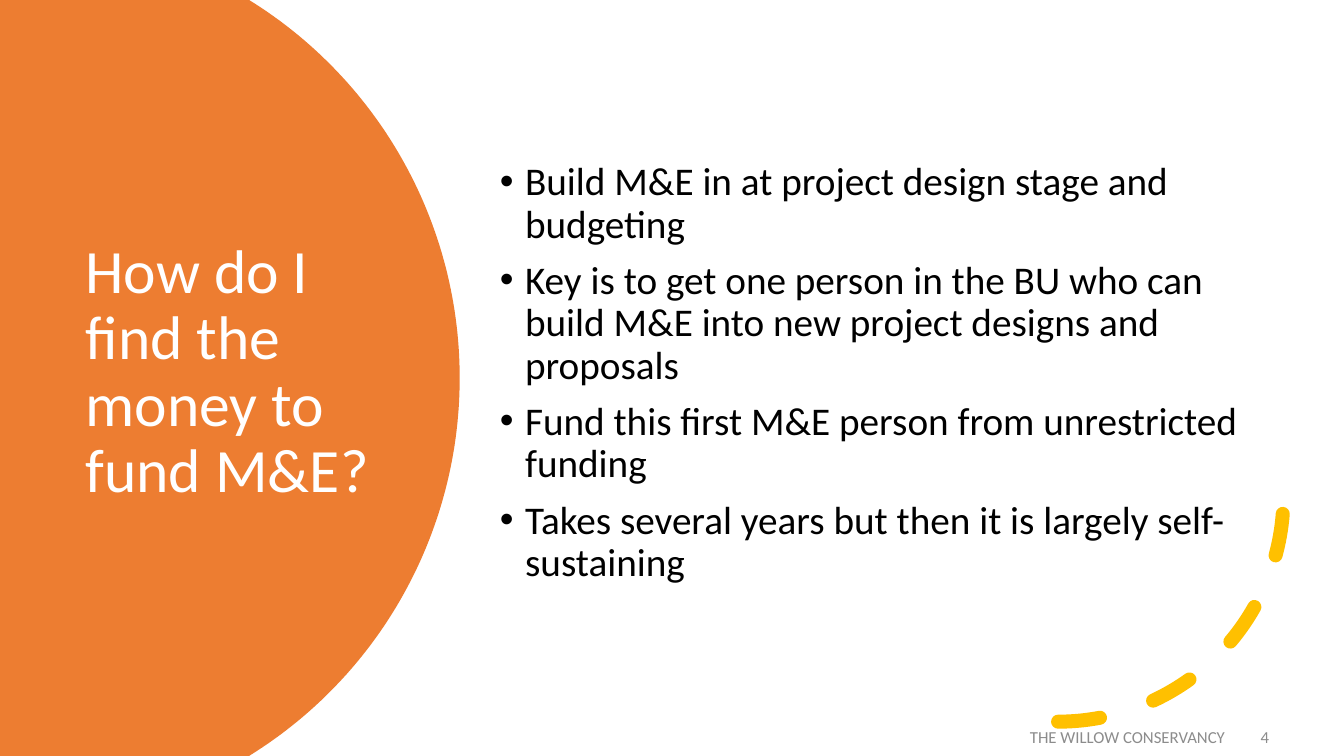
import math
from lxml import etree
from pptx import Presentation
from pptx.dml.color import RGBColor
from pptx.enum.dml import MSO_LINE
from pptx.enum.shapes import MSO_SHAPE
from pptx.enum.text import MSO_ANCHOR, PP_ALIGN
from pptx.oxml.ns import qn
from pptx.util import Inches, Pt

ARC = MSO_SHAPE.ARC
DASH = MSO_LINE.DASH
MIDDLE = MSO_ANCHOR.MIDDLE
LEFT, CENTER, RIGHT = PP_ALIGN.LEFT, PP_ALIGN.CENTER, PP_ALIGN.RIGHT

FONT = "Calibri"
COLORS = {
    "panel": "ED7D31",
    "title": "FFFFFF",
    "body": "000000",
    "accent": "FFC000",
    "footer": "8C8C8C",
}
TITLE = "How do I find the money to fund M&E?"
BULLETS = [
    "Build M&E in at project design stage and budgeting",
    "Key is to get one person in the BU who can build M&E into new project designs and proposals",
    "Fund this first M&E person from unrestricted funding",
    "Takes several years but then it is largely self-sustaining",
]


def color(name):
    return RGBColor.from_string(COLORS[name])


def add_text(s, box, texts, size, color_name, align=LEFT, spacing=1.0):
    tf = s.shapes.add_textbox(*map(Inches, box)).text_frame
    tf.word_wrap = True
    tf.vertical_anchor = MIDDLE
    for i, text in enumerate(texts):
        p = tf.add_paragraph() if i else tf.paragraphs[0]
        p.alignment = align
        p.line_spacing = spacing
        r = p.add_run()
        r.text = text
        r.font.name = FONT
        r.font.size = Pt(size)
        r.font.color.rgb = color(color_name)
    return tf


def add_title_panel(s, x, y, w, h):
    radius = 4.41
    cx, cy = x + w - radius, y + h / 2
    limit = math.asin(h / 2 / radius)
    steps = 120
    angles = [limit * (2 * i / steps - 1) for i in range(steps + 1)]
    curve = [(Inches(cx + radius * math.cos(a)), Inches(cy + radius * math.sin(a)))
             for a in angles]
    fb = s.shapes.build_freeform(Inches(x), Inches(y))
    fb.add_line_segments(curve + [(Inches(x), Inches(y + h))], close=True)
    sp = fb.convert_to_shape()
    sp.shadow.inherit = False
    sp.fill.solid()
    sp.fill.fore_color.rgb = color("panel")
    sp.line.fill.background()
    add_text(s, (x + 0.75, y + 1.26, 3.5, 4.88), [TITLE], 44, "title", spacing=0.9)


def add_dashed_arc(s, x, y, size):
    sp = s.shapes.add_shape(ARC, *map(Inches, (x, y, size, size)))
    sp.shadow.inherit = False
    sp.fill.background()
    sp.line.color.rgb = color("accent")
    sp.line.width = Pt(10)
    sp.line.dash_style = DASH
    sp.element.spPr.find(qn("a:xfrm")).set("flipV", "1")
    ln = sp.element.spPr.find(qn("a:ln"))
    ln.set("cap", "rnd")
    etree.SubElement(ln, qn("a:round"))


def add_bullets(s, x, y, w, h):
    tf = add_text(s, (x, y, w, h), BULLETS, 28, "body", spacing=0.9)
    for p in tf.paragraphs:
        p.space_before = Pt(10)
        pPr = p._p.get_or_add_pPr()
        pPr.set("marL", str(Inches(0.25)))
        pPr.set("indent", str(Inches(-0.25)))
        etree.SubElement(pPr, qn("a:buFont")).set("typeface", "Arial")
        etree.SubElement(pPr, qn("a:buChar")).set("char", "•")


def add_footer(s, x, y, w, h):
    number_w = 0.59
    name_w = w - number_w
    add_text(s, (x, y, name_w, h), ["THE WILLOW CONSERVANCY"], 12, "footer", RIGHT)
    add_text(s, (x + name_w, y, number_w, h), ["4"], 12, "footer", CENTER)


def main():
    prs = Presentation()
    prs.slide_width = Inches(13.33)
    prs.slide_height = Inches(7.5)
    s = prs.slides.add_slide(prs.slide_layouts[6])
    add_title_panel(s, 0, 0, 4.56, 7.5)
    add_dashed_arc(s, 8.26, 2.69, 4.47)
    add_bullets(s, 4.86, 0.65, 7.55, 6.11)
    add_footer(s, 10.06, 7.11, 2.78, 0.4)
    prs.save("out.pptx")


if __name__ == "__main__":
    main()
